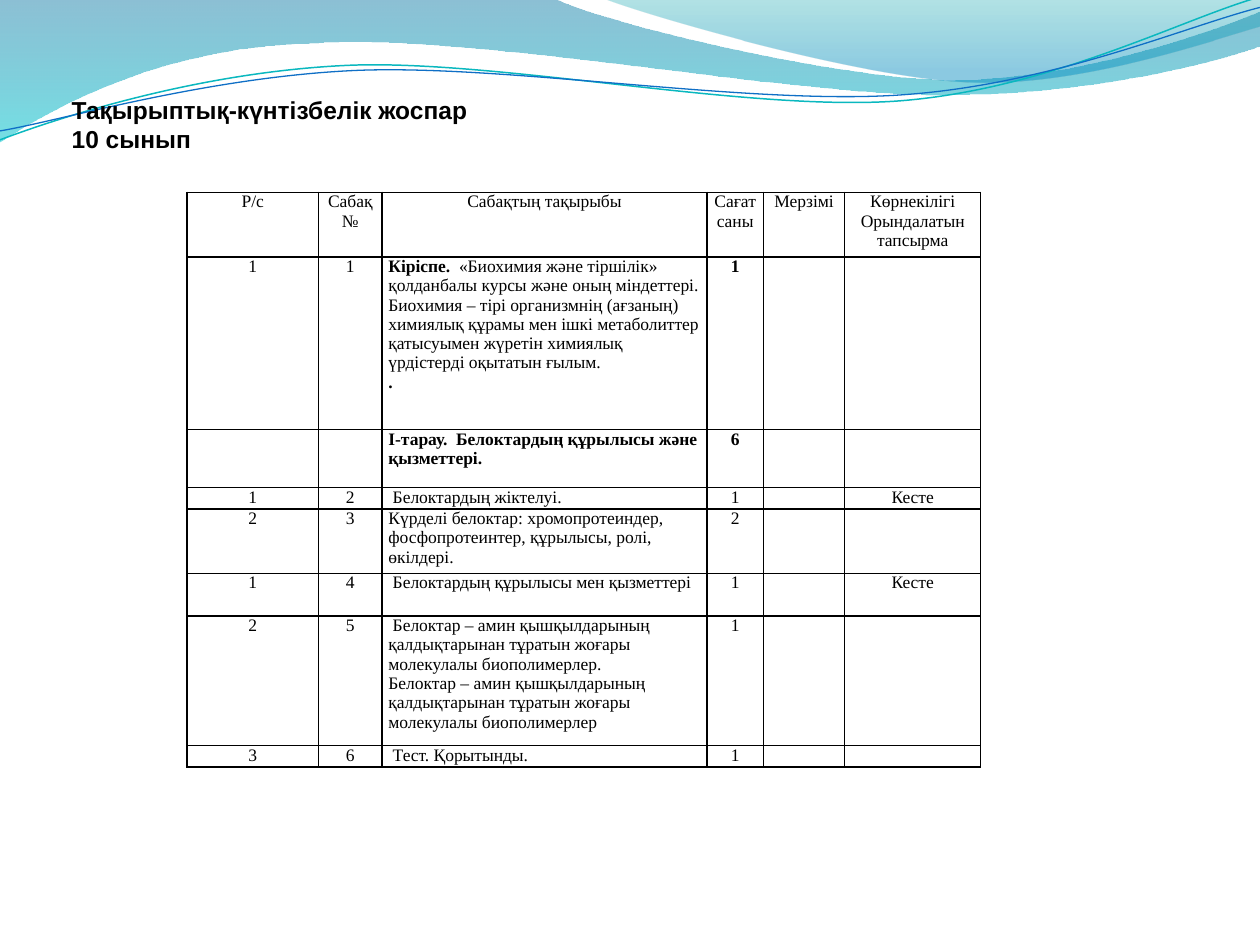
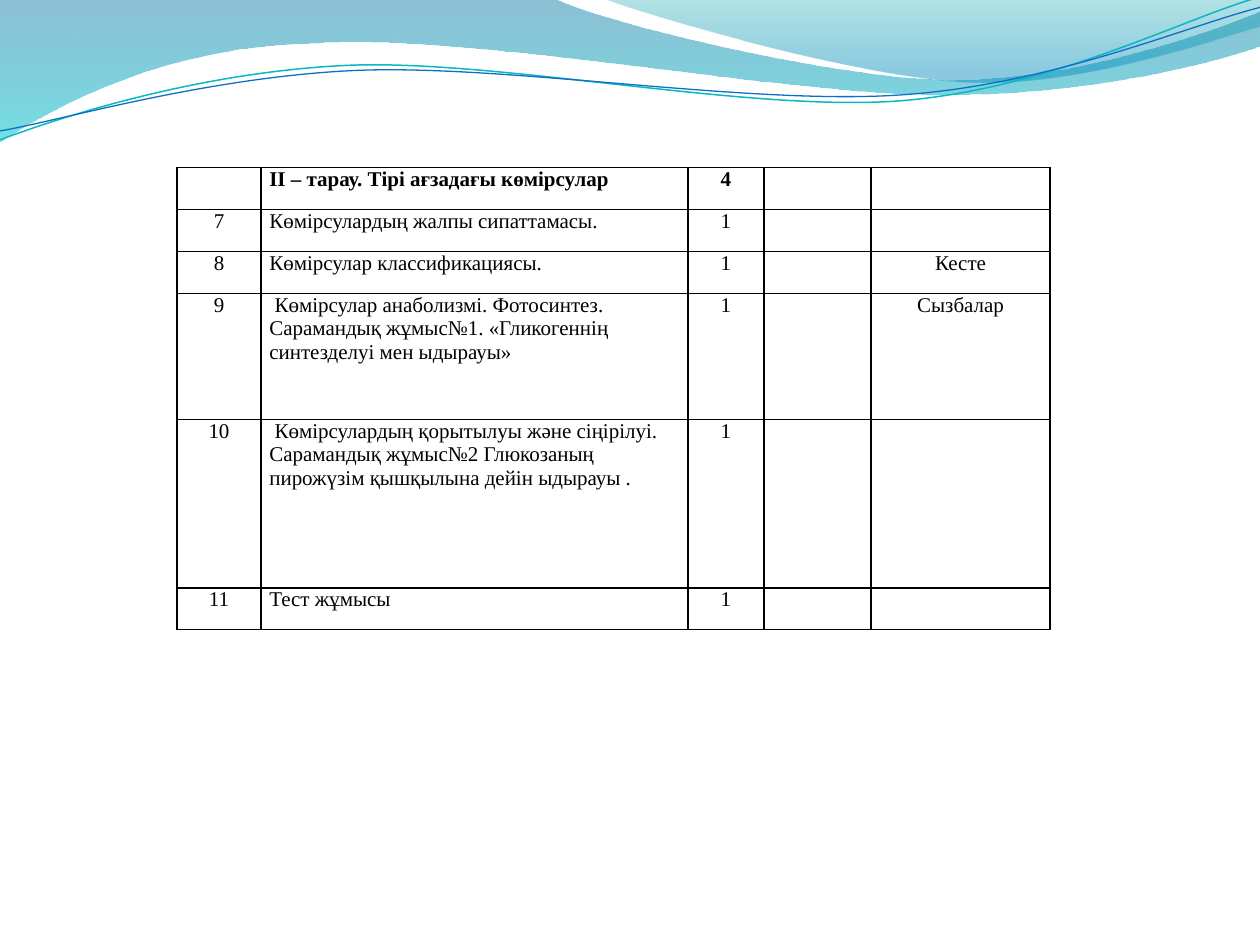
import dataclasses

import lxml.etree
import pptx
import pptx.dml.color
import pptx.enum.text
import pptx.oxml.ns
import pptx.util

Cm = pptx.util.Cm
Pt = pptx.util.Pt
qn = pptx.oxml.ns.qn
ALIGN = pptx.enum.text.PP_ALIGN


@dataclasses.dataclass(frozen=True)
class Theme:
    ink: str = "000000"
    line_teal: str = "0AB8BF"
    line_blue: str = "0F6FC6"
    # Gradient stops: position, colour, opacity in percent
    wide_wave: tuple = ((0, "0074A1", 45), (1, "00C6CF", 55))
    right_wave: tuple = ((0, "00A1A9", 30), (0.8, "008BBF", 45))
    title_font: str = "Arial"
    table_font: str = "Times New Roman"
    title_size: float = 14
    plan_size: float = 10
    chapter_size: float = 12
    border: float = 1
    curve_tilt: float = -2.7


THEME = Theme()

# Outlines in cm: a pair is a corner, six numbers are a cubic curve.
WIDE_WAVE = [
    (0, 0), (11.18, -0.03),
    (12.09, 0.43, 16.87, 1.6, 19.25, 1.6),
    (21.67, 1.6, 24.33, 0.66, 25.4, 0.23),
    (25.43, 0.91),
    (24.97, 1.12, 22.1, 1.93, 18.95, 1.91),
    (15.8, 1.91, 9.7, 0.71, 6.53, 0.86),
    (3.28, 0.91, 1.17, 2.11, -0.03, 2.87),
]
RIGHT_WAVE = [
    (12.17, -0.03),
    (12.93, 0.28, 17.32, 1.57, 19.53, 1.65),
    (21.74, 1.75, 24.41, 0.81, 25.4, 0.53),
    (25.4, 0),
]
# The two curves are given level and tilted afterwards.
TEAL_CURVE = [
    (-0.05, 2.22),
    (1.19, 1.82, 4.02, 1.04, 7.05, 1.05),
    (10.05, 1.07, 15.02, 2.37, 18.08, 2.29),
    (21.14, 2.2, 23.87, 0.91, 25.41, 0.55),
]
BLUE_CURVE = [
    (-0.04, 2.04),
    (1.16, 1.9, 4.18, 1.15, 7.2, 1.16),
    (10.25, 1.18, 15.13, 2.25, 18.18, 2.17),
    (21.21, 2.1, 23.93, 1.06, 25.45, 0.75),
]

# In cell text, *asterisks* mark bold and a line break starts a paragraph.
PLAN_ROWS = [
    ("Р/с", "Сабақ №", "Сабақтың тақырыбы", "Сағат саны", "Мерзімі",
     "Көрнекілігі\nОрындалатын тапсырма"),
    ("1", "1",
     "*Кіріспе.  *«Биохимия және тіршілік» қолданбалы курсы және оның міндеттері.\n"
     "Биохимия – тірі организмнің (ағзаның) химиялық құрамы мен ішкі метаболиттер "
     "қатысуымен жүретін химиялық үрдістерді оқытатын ғылым.\n*.*",
     "*1*", "", ""),
    ("", "", "*І-тарау.  Белоктардың құрылысы және қызметтері.*", "*6*", "", ""),
    ("1", "2", " Белоктардың жіктелуі.", "1", "", "Кесте"),
    ("2", "3",
     "Күрделі белоктар: хромопротеиндер, фосфопротеинтер, құрылысы, ролі, өкілдері.",
     "2", "", ""),
    ("1", "4", " Белоктардың құрылысы мен қызметтері", "1", "", "Кесте"),
    ("2", "5",
     " Белоктар – амин қышқылдарының қалдықтарынан тұратын жоғары молекулалы "
     "биополимерлер.\n"
     "Белоктар – амин қышқылдарының қалдықтарынан тұратын жоғары молекулалы "
     "биополимерлер",
     "1", "", ""),
    ("3", "6", " Тест. Қорытынды.", "1", "", ""),
]
CHAPTER_ROWS = [
    ("", "*ІІ – тарау. Тірі ағзадағы көмірсулар*", "*4*", "", ""),
    ("7", "Көмірсулардың жалпы сипаттамасы.", "1", "", ""),
    ("8", "Көмірсулар классификациясы.", "1", "", "Кесте"),
    ("9",
     " Көмірсулар анаболизмі. Фотосинтез. Сарамандық жұмыс№1. «Гликогеннің "
     "синтезделуі мен ыдырауы»",
     "1", "", "Сызбалар"),
    ("10",
     " Көмірсулардың қорытылуы жəне сіңірілуі. Сарамандық жұмыс№2 Глюкозаның "
     "пирожүзім қышқылына дейін ыдырауы .",
     "1", "", ""),
    ("11", "Тест жұмысы", "1", "", ""),
]


def rgb(value):
    return pptx.dml.color.RGBColor.from_string(value)


def write_text(tf, text, *, font, size, color=THEME.ink, bold=False, align=ALIGN.LEFT):
    """Fill tf with one paragraph per line; *asterisks* turn bold on."""
    tf.word_wrap = True
    for i, line in enumerate(text.split("\n")):
        p = tf.paragraphs[0] if i == 0 else tf.add_paragraph()
        p.alignment = align
        for j, part in enumerate(line.split("*")):
            if part:
                r = p.add_run()
                r.text = part
                r.font.name = font
                r.font.size = Pt(size)
                r.font.bold = bold or j % 2 == 1
                r.font.color.rgb = rgb(color)
        if not line:
            # Keeps an empty cell from forcing a taller row
            end = lxml.etree.SubElement(p._p, qn("a:endParaRPr"))
            end.set("sz", str(int(size * 100)))


def add_outline(slide, outline, close):
    """Draw the corners and control points, then join each three into a curve."""
    points = [(Cm(s[k]), Cm(s[k + 1])) for s in outline for k in range(0, len(s), 2)]
    builder = slide.shapes.build_freeform(*points[0])
    builder.add_line_segments(points[1:], close=close)
    sp = builder.convert_to_shape()
    sp.shadow.inherit = False
    lines = iter(list(sp._element.iter(qn("a:lnTo"))))
    for segment in outline[1:]:
        first = next(lines)
        if len(segment) == 6:
            curve = lxml.etree.Element(qn("a:cubicBezTo"))
            first.addprevious(curve)
            for line in (first, next(lines), next(lines)):
                curve.append(line[0])
                line.getparent().remove(line)
    return sp


def add_wave(slide, outline, stops):
    sp = add_outline(slide, outline, close=True)
    sp.line.fill.background()
    sp.fill.gradient()
    sp.fill.gradient_angle = 270
    for stop, (position, color, _) in zip(sp.fill.gradient_stops, stops):
        stop.position = position
        stop.color.rgb = rgb(color)
    for clr, (_, _, opacity) in zip(sp._element.iter(qn("a:srgbClr")), stops):
        lxml.etree.SubElement(clr, qn("a:alpha")).set("val", str(opacity * 1000))
    return sp


def add_curve(slide, outline, color, width):
    sp = add_outline(slide, outline, close=False)
    sp.rotation = THEME.curve_tilt
    sp.fill.background()
    sp.line.color.rgb = rgb(color)
    sp.line.width = Pt(width)
    return sp


def add_master_waves(prs, slide):
    """Build the header waves on slide, then move them to the master."""
    waves = [
        add_wave(slide, WIDE_WAVE, THEME.wide_wave),
        add_wave(slide, RIGHT_WAVE, THEME.right_wave),
        add_curve(slide, TEAL_CURVE, THEME.line_teal, 0.85),
        add_curve(slide, BLUE_CURVE, THEME.line_blue, 0.75),
    ]
    tree = prs.slide_master.element.cSld.spTree
    for i, sp in enumerate(waves):
        sp._element.nvSpPr.cNvPr.set("id", str(100 + i))
        tree.insert(2 + i, sp._element)


def set_title(slide, text):
    sp = slide.shapes.title
    sp.left, sp.top, sp.width, sp.height = Cm(1.19), Cm(1.78), Cm(24.21), Cm(2.24)
    tf = sp.text_frame
    tf.auto_size = pptx.enum.text.MSO_AUTO_SIZE.NONE
    tf.vertical_anchor = pptx.enum.text.MSO_ANCHOR.TOP
    write_text(tf, text, font=THEME.title_font, size=THEME.title_size, bold=True)


def set_borders(cell):
    tcPr = cell._tc.get_or_add_tcPr()
    for side in ("a:lnL", "a:lnR", "a:lnT", "a:lnB"):
        ln = lxml.etree.SubElement(tcPr, qn(side))
        ln.set("w", str(Pt(THEME.border)))
        fill = lxml.etree.SubElement(ln, qn("a:solidFill"))
        lxml.etree.SubElement(fill, qn("a:srgbClr")).set("val", THEME.ink)


def add_plan_table(slide, rows, *, left, top, widths, heights, topic_col, size, inset,
                   header=False):
    """Add a ruled table; topics below the header are left-aligned, the rest centred."""
    table = slide.shapes.add_table(len(rows), len(widths), Cm(left), Cm(top),
                                   Cm(sum(widths)), Cm(sum(heights))).table
    table.first_row = table.horz_banding = False
    for column, width in zip(table.columns, widths):
        column.width = Cm(width)
    for i, (row, height, texts) in enumerate(zip(table.rows, heights, rows)):
        row.height = Cm(height)
        for col, (cell, text) in enumerate(zip(row.cells, texts)):
            cell.margin_left = cell.margin_right = Cm(inset)
            cell.margin_top = cell.margin_bottom = 0
            set_borders(cell)
            cell.fill.background()
            is_topic = col == topic_col and not (header and i == 0)
            write_text(cell.text_frame, text, font=THEME.table_font, size=size,
                       align=ALIGN.LEFT if is_topic else ALIGN.CENTER)


def main():
    prs = pptx.Presentation()
    prs.slide_width, prs.slide_height = Cm(25.4), Cm(19.05)
    title_only, blank = prs.slide_layouts[5], prs.slide_layouts[6]

    slide = prs.slides.add_slide(title_only)
    add_master_waves(prs, slide)
    add_plan_table(slide, PLAN_ROWS, left=3.77, top=3.88,
                   widths=[2.65, 1.28, 6.55, 1.14, 1.64, 2.74],
                   heights=[1.3, 3.48, 1.17, 0.43, 1.3, 0.86, 2.61, 0.43],
                   topic_col=2, size=THEME.plan_size, inset=0.13, header=True)
    set_title(slide, "Тақырыптық-күнтізбелік жоспар\n10 сынып")

    slide = prs.slides.add_slide(blank)
    add_plan_table(slide, CHAPTER_ROWS, left=3.57, top=3.38,
                   widths=[1.69, 8.61, 1.53, 2.16, 3.61],
                   heights=[0.84, 0.85, 0.85, 2.54, 3.39, 0.84],
                   topic_col=1, size=THEME.chapter_size, inset=0.17)

    prs.save("out.pptx")


if __name__ == "__main__":
    main()
